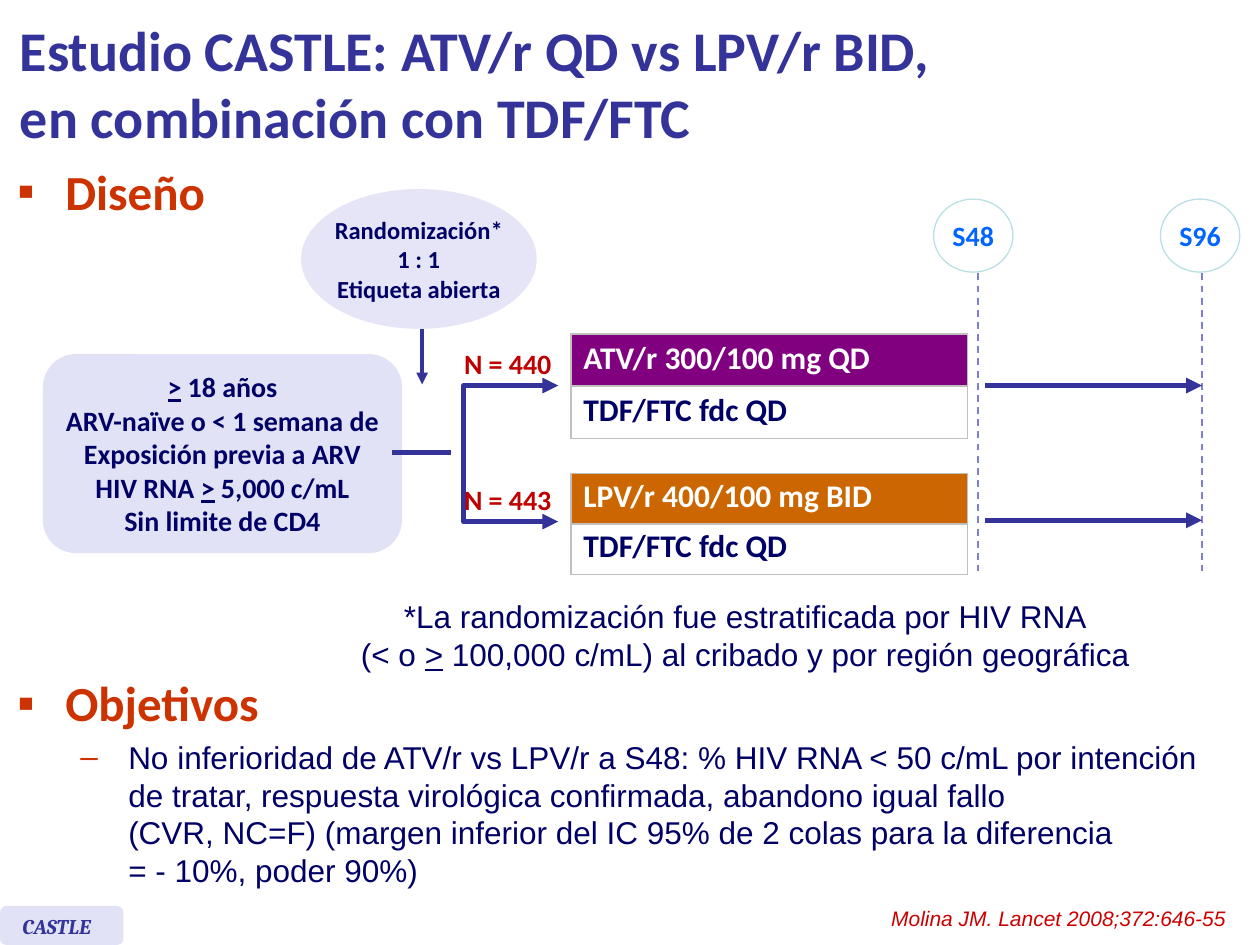
from lxml import etree
from pptx import Presentation
from pptx.dml.color import RGBColor
from pptx.enum.dml import MSO_LINE
from pptx.enum.shapes import MSO_CONNECTOR, MSO_SHAPE
from pptx.enum.text import MSO_ANCHOR, PP_ALIGN
from pptx.oxml.ns import qn
from pptx.util import Inches, Pt

LEFT, CENTER, RIGHT = PP_ALIGN.LEFT, PP_ALIGN.CENTER, PP_ALIGN.RIGHT
TOP, MIDDLE = MSO_ANCHOR.TOP, MSO_ANCHOR.MIDDLE
ELLIPSE, ROUNDED = MSO_SHAPE.OVAL, MSO_SHAPE.ROUNDED_RECTANGLE
STRAIGHT = MSO_CONNECTOR.STRAIGHT
DASH = MSO_LINE.DASH

COLUMNS, ROWS = 100, 75
INDIGO, NAVY, RUST, RED = "333399", "000066", "CC3300", "C00000"
LAVENDER, WHITE, SILVER = "E2E2F6", "FFFFFF", "C0C0C0"


def color(value):
    return RGBColor.from_string(value)


class SlideBuilder:
    def __init__(self, presentation):
        self.slide = presentation.slides.add_slide(presentation.slide_layouts[6])
        self.column = presentation.slide_width / COLUMNS
        self.row = presentation.slide_height / ROWS

    def place(self, *lengths):
        units = (self.column, self.row) * 2
        return [round(length * unit) for length, unit in zip(lengths, units)]

    def set_text(self, paragraph, text, size, ink=NAVY, font="Calibri", bold=True,
                 italic=False, align=LEFT):
        for number, line in enumerate(text.split("\n")):
            if number:
                paragraph.add_line_break()
            for index, part in enumerate(line.split("_")):
                if part:
                    run = paragraph.add_run()
                    run.text = part
                    if index % 2:
                        run.font.underline = True
        paragraph.alignment = align
        paragraph.font.name = font
        paragraph.font.size = Pt(size)
        paragraph.font.bold = bold
        paragraph.font.italic = italic
        paragraph.font.color.rgb = color(ink)

    def text(self, box, text, anchor=TOP, wrap=True, **style):
        frame = self.slide.shapes.add_textbox(*self.place(*box)).text_frame
        frame.word_wrap = wrap
        frame.vertical_anchor = anchor
        self.set_text(frame.paragraphs[0], text, **style)

    def shape(self, kind, box, fill, lines=(), outline=None, **style):
        shape = self.slide.shapes.add_shape(kind, *self.place(*box))
        shape.shadow.inherit = False
        shape.fill.solid()
        shape.fill.fore_color.rgb = color(fill)
        if outline:
            self.stroke(shape, outline, 0.75)
        else:
            shape.line.fill.background()
        frame = shape.text_frame
        frame.word_wrap = False
        frame.vertical_anchor = MIDDLE
        for index, line in enumerate(lines):
            paragraph = frame.add_paragraph() if index else frame.paragraphs[0]
            self.set_text(paragraph, line, align=CENTER, **style)

    def bullets(self, box, items):
        frame = self.slide.shapes.add_textbox(*self.place(*box)).text_frame
        frame.word_wrap = True
        for index, (level, text) in enumerate(items):
            paragraph = frame.add_paragraph() if index else frame.paragraphs[0]
            paragraph.level = level
            properties = paragraph._p.get_or_add_pPr()
            properties.set("marL", str(Inches((0.38, 0.88)[level])))
            properties.set("indent", str(Inches(-0.38)))
            tint = etree.SubElement(properties, qn("a:buClr"))
            etree.SubElement(tint, qn("a:srgbClr"), val=RUST)
            etree.SubElement(properties, qn("a:buFont"), typeface="Arial")
            etree.SubElement(properties, qn("a:buChar"), char="▪–"[level])
            if index:
                paragraph.space_before = Pt(3.6)
            if level:
                self.set_text(paragraph, text, 18, font="Arial", bold=False)
            else:
                self.set_text(paragraph, text, 28, RUST)

    def stroke(self, shape, ink, width, ends=(), dash=None):
        shape.line.color.rgb = color(ink)
        shape.line.width = Pt(width)
        if dash:
            shape.line.dash_style = dash
        outline = shape._element.spPr.find(qn("a:ln"))
        for end in ends:
            etree.SubElement(outline, qn(f"a:{end}"), type="triangle")

    def line(self, start, end, ink=INDIGO, width=3, arrow=False, dash=None):
        connector = self.slide.shapes.add_connector(STRAIGHT, *self.place(*start, *end))
        self.stroke(connector, ink, width, ["tailEnd"] if arrow else [], dash)
        etree.SubElement(connector._element.spPr, qn("a:effectLst"))

    def bracket(self, points):
        first, *others = [self.place(*point) for point in points]
        outline = self.slide.shapes.build_freeform(*first)
        outline.add_line_segments(others, close=False)
        shape = outline.convert_to_shape()
        shape.shadow.inherit = False
        shape.fill.background()
        self.stroke(shape, INDIGO, 3, ["headEnd", "tailEnd"])

    def table(self, box, lines, header_fill, spacing):
        frame = self.slide.shapes.add_table(len(lines), 1, *self.place(*box))
        table = frame.table
        table.first_row = table.horz_banding = False
        for index, line in enumerate(lines):
            cell = table.cell(index, 0)
            cell.vertical_anchor = MIDDLE
            properties = cell._tc.get_or_add_tcPr()
            for side in "LRTB":
                border = etree.SubElement(properties, qn(f"a:ln{side}"), w=str(Pt(1)))
                solid = etree.SubElement(border, qn("a:solidFill"))
                etree.SubElement(solid, qn("a:srgbClr"), val=SILVER)
            cell.fill.solid()
            cell.fill.fore_color.rgb = color(WHITE if index else header_fill)
            paragraph = cell.text_frame.paragraphs[0]
            paragraph.line_spacing = spacing
            self.set_text(paragraph, line, 18, NAVY if index else WHITE)


def main():
    presentation = Presentation()
    presentation.slide_width = Inches(10)
    presentation.slide_height = Inches(7.5)
    builder = SlideBuilder(presentation)

    builder.text((68.8, 71.4, 29.5, 3), "Molina JM. Lancet 2008;372:646-55",
                 size=12, ink="CC0000", font="Arial", bold=False, italic=True, align=RIGHT)
    builder.shape(ROUNDED, (0, 71.9, 9.8, 3.1), LAVENDER)
    builder.text((0.8, 72, 8.8, 3), "CASTLE", size=12, ink=INDIGO,
                 font="Cambria", italic=True)

    builder.bullets((0.4, 12.3, 19.8, 6.3), [(0, "Diseño")])
    builder.bullets((0.4, 52.9, 98, 15.8), [
        (0, "Objetivos"),
        (1, "No inferioridad de ATV/r vs LPV/r a S48: % HIV RNA < 50 c/mL por intención\n"
            "de tratar, respuesta virológica confirmada, abandono igual fallo\n"
            "(CVR, NC=F) (margen inferior del IC 95% de 2 colas para la diferencia\n"
            "= - 10%, poder 90%)"),
    ])

    builder.line((33.5, 26.1), (33.5, 30.5), width=2.25, arrow=True)
    builder.table((45.3, 26.5, 31.5, 8.3), ["ATV/r 300/100 mg QD", "TDF/FTC fdc QD"],
                  "800080", 0.8)
    builder.table((45.3, 37.6, 31.5, 8), ["LPV/r 400/100 mg BID", "TDF/FTC fdc QD"],
                  "CC6600", 0.7)
    builder.shape(ELLIPSE, (23.9, 15, 18.7, 11.1), "E5E5F7",
                  ["Randomización*", "1 : 1", "Etiqueta abierta"], size=14)
    builder.shape(ROUNDED, (3.4, 28.1, 28.5, 15.8), LAVENDER,
                  ["_>_ 18 años", "ARV-naïve o < 1 semana de", "Exposición previa a ARV",
                   "HIV RNA _>_ 5,000 c/mL", "Sin limite de CD4"], size=16)
    builder.text((27.3, 46.9, 63.7, 7),
                 "*La randomización fue estratificada por HIV RNA\n"
                 "(< o _>_ 100,000 c/mL) al cribado y por región geográfica",
                 wrap=False, size=18, font="Arial", bold=False, align=CENTER)
    builder.text((0.6, 0.5, 89.6, 12.1),
                 "Estudio CASTLE: ATV/r QD vs LPV/r BID,\nen combinación con TDF/FTC",
                 MIDDLE, size=32, ink=INDIGO)

    builder.bracket([(44.3, 30.6), (36.8, 30.6), (36.8, 41.4), (44.3, 41.4)])
    builder.line((31.1, 35.9), (35.8, 35.9))
    for top, label in ((37.8, "N = 443"), (27, "N = 440")):
        builder.text((35.8, top, 9, 3.7), label, wrap=False, size=16, ink=RED, align=CENTER)

    for left, axis, label in ((74.1, 77.6, "S48"), (92.1, 95.4, "S96")):
        builder.shape(ELLIPSE, (left, 15.8, 6.3, 5.8), WHITE, [label], "BBE0E3",
                      size=16, ink="0066FF")
        builder.line((axis, 21.7), (axis, 45.3), "7E7ED4", 1, dash=DASH)
    for height in (30.6, 41.3):
        builder.line((78.2, height), (95.4, height), arrow=True)

    presentation.save("out.pptx")


if __name__ == "__main__":
    main()
